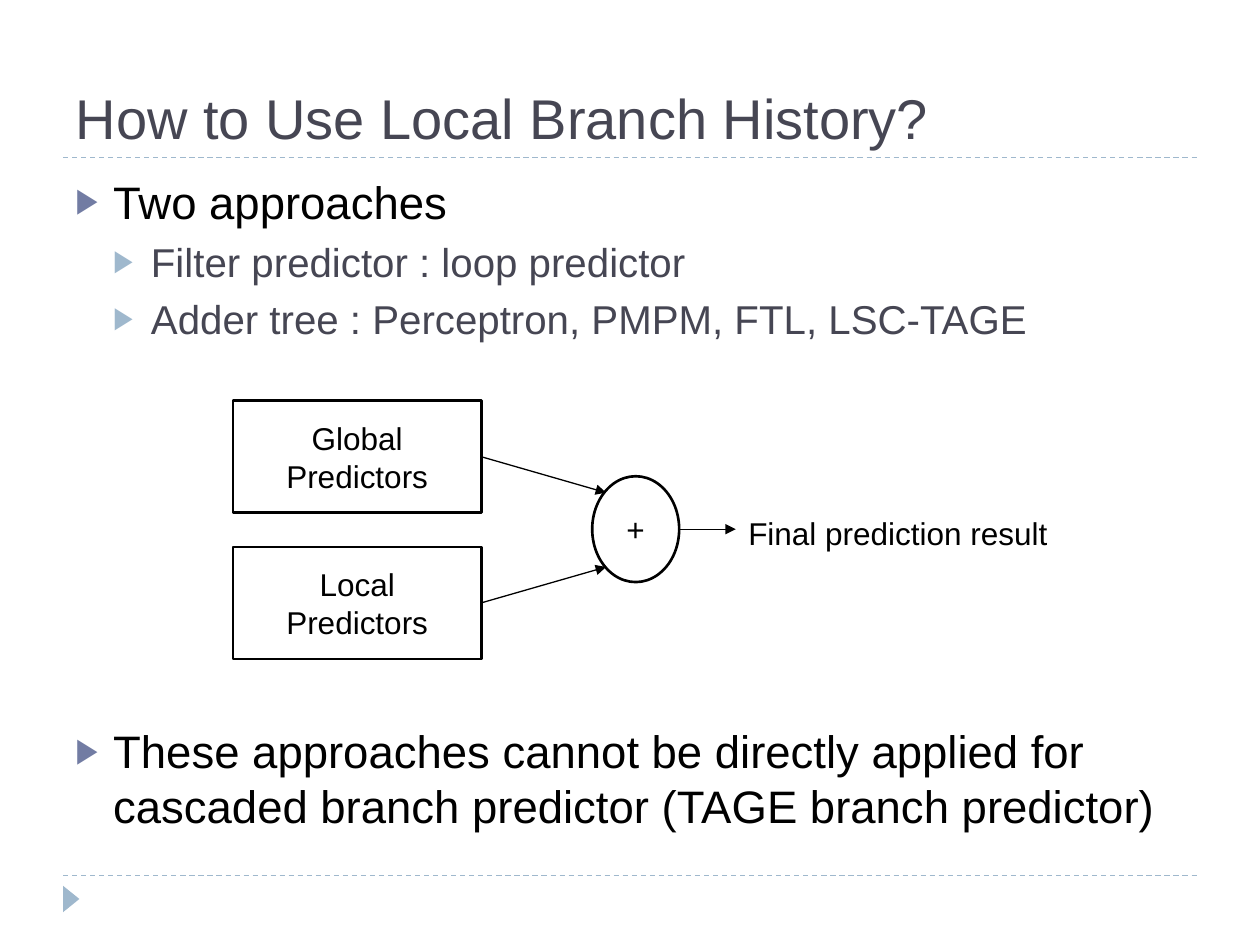
from pptx import Presentation
from pptx.dml.color import RGBColor
from pptx.enum.dml import MSO_LINE
from pptx.enum.shapes import MSO_CONNECTOR, MSO_SHAPE
from pptx.enum.text import MSO_ANCHOR as Anchor, MSO_AUTO_SIZE as AutoSize, PP_ALIGN as Align
from pptx.oxml.ns import qn
from pptx.util import Inches, Pt
from lxml.etree import SubElement

FONT = "Arial"
BLACK, WHITE, SLATE, INDIGO, SKY = "000000", "FFFFFF", "464653", "727CA3", "9FB8CD"
# Per list level: size, text colour, bullet colour, space before
LEVELS = [(26, BLACK, INDIGO, 6), (23, SLATE, SKY, 5)]
INDENT = 0.3


def rgb(color):
    return RGBColor.from_string(color)


def inches(*lengths):
    return [Inches(length) for length in lengths]


def add_run(paragraph, text, size, color):
    run = paragraph.add_run()
    run.text = text
    run.font.name = FONT
    run.font.size = Pt(size)
    run.font.color.rgb = rgb(color)


def write_lines(frame, lines, size, color, align):
    for index, line in enumerate(lines):
        paragraph = frame.add_paragraph() if index else frame.paragraphs[0]
        paragraph.alignment = align
        add_run(paragraph, line, size, color)


def add_title(slide, text):
    title = slide.shapes.title
    title.left, title.top, title.width, title.height = inches(0.5, 0.17, 9, 1.08)
    frame = title.text_frame
    frame.auto_size = AutoSize.NONE
    frame.vertical_anchor = Anchor.BOTTOM
    write_lines(frame, [text], 32, SLATE, Align.LEFT)


def add_text_box(slide, box):
    frame = slide.shapes.add_textbox(*inches(*box)).text_frame
    frame.word_wrap = True
    return frame


def set_bullet(paragraph, level, color):
    properties = paragraph._p.get_or_add_pPr()
    properties.set("marL", str(Inches(INDENT * (level + 1))))
    properties.set("indent", str(-Inches(INDENT)))
    bullet_color = SubElement(properties, qn("a:buClr"))
    SubElement(bullet_color, qn("a:srgbClr"), val=color)
    SubElement(properties, qn("a:buSzPct"), val="76000")
    SubElement(properties, qn("a:buFont"), typeface=FONT)
    SubElement(properties, qn("a:buChar"), char="▶")


def add_bullets(slide, box, items):
    frame = add_text_box(slide, box)
    for index, (level, text) in enumerate(items):
        size, color, bullet_color, space = LEVELS[level]
        paragraph = frame.add_paragraph() if index else frame.paragraphs[0]
        paragraph.level = level
        paragraph.space_before = Pt(space)
        set_bullet(paragraph, level, bullet_color)
        add_run(paragraph, text, size, color)


def add_node(slide, kind, box, lines):
    node = slide.shapes.add_shape(kind, *inches(*box))
    node.shadow.inherit = False
    node.fill.solid()
    node.fill.fore_color.rgb = rgb(WHITE)
    node.line.color.rgb = rgb(BLACK)
    node.line.width = Pt(1.5)
    node.text_frame.vertical_anchor = Anchor.MIDDLE
    write_lines(node.text_frame, lines, 18, BLACK, Align.CENTER)


def add_line(slide, start, end, color):
    connector = slide.shapes.add_connector(MSO_CONNECTOR.STRAIGHT, *inches(*start, *end))
    connector.line.color.rgb = rgb(color)
    connector.line.width = Pt(0.75)
    SubElement(connector._element.spPr, qn("a:effectLst"))
    return connector.line


def add_arrow(slide, start, end):
    line = add_line(slide, start, end, BLACK)
    SubElement(line._get_or_add_ln(), qn("a:tailEnd"), type="triangle")


def add_decoration(slide):
    for y in (6.95, 1.25):
        add_line(slide, (0.5, y), (9.5, y), SKY).dash_style = MSO_LINE.DASH
    marker = slide.shapes.add_shape(MSO_SHAPE.ISOSCELES_TRIANGLE, *inches(0.46, 7.07, 0.21, 0.13))
    marker.rotation = 90
    marker.shadow.inherit = False
    marker.fill.solid()
    marker.fill.fore_color.rgb = rgb(SKY)
    marker.line.fill.background()


def add_adder_diagram(slide):
    left, width, height = 1.85, 1.97, 0.89
    for name, top, adder_y in (("Global", 3.18, 3.91), ("Local", 4.34, 4.5)):
        add_node(slide, MSO_SHAPE.RECTANGLE, (left, top, width, height), [name, "Predictors"])
        add_arrow(slide, (left + width, top + height / 2), (4.81, adder_y))
    add_node(slide, MSO_SHAPE.OVAL, (4.7, 3.78, 0.69, 0.84), ["+"])
    add_arrow(slide, (5.39, 4.2), (5.84, 4.2))
    result = add_text_box(slide, (5.84, 4.03, 2.69, 0.4))
    write_lines(result, ["Final prediction result"], 18, BLACK, Align.LEFT)


def main():
    prs = Presentation()
    prs.slide_width, prs.slide_height = inches(10, 7.5)
    slide = prs.slides.add_slide(prs.slide_layouts[5])
    add_decoration(slide)
    add_title(slide, "How to Use Local Branch History?")
    add_bullets(slide, (0.5, 1.33, 9, 1.6), [
        (0, "Two approaches"),
        (1, "Filter predictor : loop predictor"),
        (1, "Adder tree : Perceptron, PMPM, FTL, LSC-TAGE"),
    ])
    add_adder_diagram(slide)
    add_bullets(slide, (0.5, 5.69, 9, 1.04), [
        (0, "These approaches cannot be directly applied for cascaded branch predictor "
            "(TAGE branch predictor)"),
    ])
    prs.save("out.pptx")


if __name__ == "__main__":
    main()
